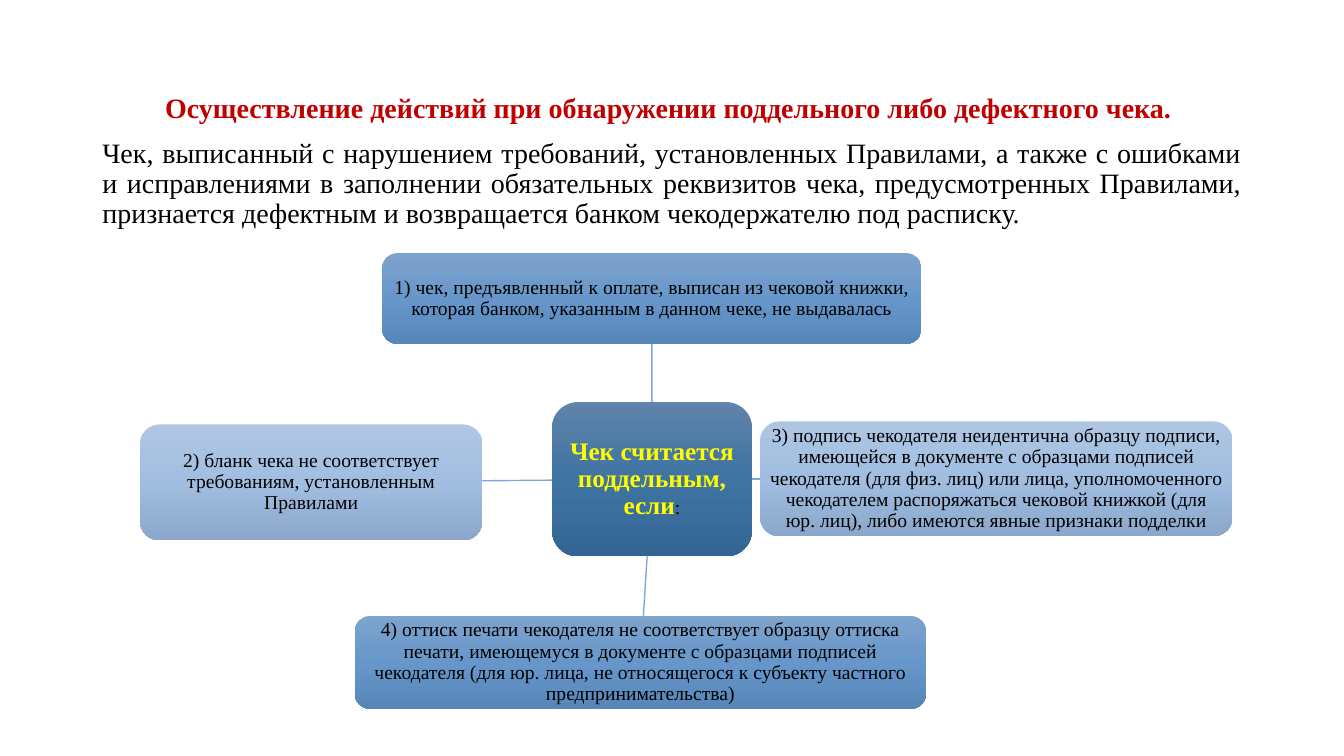
"""Build a slide on forged and defective cheques with a hub diagram."""
from copy import deepcopy

from lxml import etree
from pptx import Presentation
from pptx.dml.color import RGBColor
from pptx.enum.shapes import MSO_CONNECTOR, MSO_SHAPE
from pptx.enum.text import MSO_ANCHOR, PP_ALIGN
from pptx.oxml.ns import qn
from pptx.util import Pt

CENTER, JUSTIFY = PP_ALIGN.CENTER, PP_ALIGN.JUSTIFY
MIDDLE, TOP = MSO_ANCHOR.MIDDLE, MSO_ANCHOR.TOP
ROUNDED, STRAIGHT = MSO_SHAPE.ROUNDED_RECTANGLE, MSO_CONNECTOR.STRAIGHT

FONT = "Times New Roman"
LINE_COLOR = "7AA9DA"
BLUE = ("7EA3CC", "6797CA", "5786B9")
PALE = ("AFC6E3", "A1BEE1", "8BA8CC")
DARK = ("5F83AA", "3F73A2", "346694")

HEADING = {"size": Pt(20), "bold": True, "color": "C00000"}
BODY = {"size": Pt(20), "bold": False, "color": "000000"}
LABEL = {"size": Pt(14), "bold": False, "color": "000000"}
HUB_LABEL = {"size": Pt(18), "bold": True, "color": "FFFF00"}

INTRO_AREA = (66, 64, 828, 423)
INTRO = [
    (CENTER, [("Осуществление действий при обнаружении поддельного либо дефектного чека. ", HEADING)]),
    (JUSTIFY, [("Чек, выписанный с нарушением требований, установленных Правилами, а также с ошибками "
                "и исправлениями в заполнении обязательных реквизитов чека, предусмотренных Правилами, "
                "признается дефектным и возвращается банком чекодержателю под расписку.", BODY)]),
]
HUB_AREA = (394.4, 287.2, 142.6, 110.2)
HUB_TEXT = [("Чек считается поддельным, если", HUB_LABEL), (":", LABEL)]
SIGNS = [
    ((273, 180.8, 385.2, 64.8), BLUE,
     "1) чек, предъявленный к оплате, выписан из чековой книжки, которая банком, "
     "указанным в данном чеке, не выдавалась"),
    ((100, 303.2, 244.6, 82.8), PALE,
     "2) бланк чека не соответствует требованиям, установленным Правилами"),
    ((543, 301, 337.5, 82), PALE,
     "3) подпись чекодателя неидентична образцу подписи, имеющейся в документе с образцами "
     "подписей чекодателя (для физ. лиц) или лица, уполномоченного чекодателем распоряжаться "
     "чековой книжкой (для юр. лиц), либо имеются явные признаки подделки"),
    ((253.4, 440, 408.2, 66.4), BLUE,
     "4) оттиск печати чекодателя не соответствует образцу оттиска печати, имеющемуся в документе "
     "с образцами подписей чекодателя (для юр. лица, не относящегося к субъекту частного "
     "предпринимательства)"),
]


def color(value):
    return RGBColor.from_string(value)


def apply(target, values):
    for name, value in values.items():
        setattr(target, name, value)


def write(box, paragraphs, anchor, inset_x, inset_y, gap=0):
    frame = box.text_frame
    apply(frame, {"word_wrap": True, "vertical_anchor": anchor,
                  "margin_left": Pt(inset_x), "margin_right": Pt(inset_x),
                  "margin_top": Pt(inset_y), "margin_bottom": Pt(inset_y)})
    for index, (alignment, spans) in enumerate(paragraphs):
        para = frame.add_paragraph() if index else frame.paragraphs[0]
        apply(para, {"alignment": alignment, "line_spacing": 0.9,
                     "space_before": Pt(gap if index else 0)})
        for text, style in spans:
            span = para.add_run()
            span.text = text
            apply(span.font, {"name": FONT, "size": style["size"], "bold": style["bold"]})
            span.font.color.rgb = color(style["color"])


def add_card(page, area, shades, spans, inset):
    card = page.shapes.add_shape(ROUNDED, *map(Pt, area))
    card.shadow.inherit = False
    card.line.fill.background()
    card.fill.gradient()
    card.fill.gradient_angle = 270
    stops = card._element.spPr.find(qn("a:gradFill")).find(qn("a:gsLst"))
    stops.insert(1, deepcopy(stops[0]))
    for stop, position, shade in zip(card.fill.gradient_stops, (0, 0.5, 1), shades):
        stop.position = position
        stop.color.rgb = color(shade)
    write(card, [(CENTER, spans)], MIDDLE, inset, inset)


def center(area):
    left, top, width, height = area
    return left + width / 2, top + height / 2


def edge_point(area, target):
    """Return where the line from the centre of area to target leaves area."""
    x, y = center(area)
    dx, dy = target[0] - x, target[1] - y
    share = 1 / max(abs(dx) / (area[2] / 2), abs(dy) / (area[3] / 2))
    return x + dx * share, y + dy * share


def add_spoke(page, area):
    start = edge_point(HUB_AREA, center(area))
    end = edge_point(area, center(HUB_AREA))
    spoke = page.shapes.add_connector(STRAIGHT, *map(Pt, start + end))
    spoke.line.width = Pt(1)
    spoke.line.color.rgb = color(LINE_COLOR)
    etree.SubElement(spoke._element.spPr, qn("a:effectLst"))


def main():
    deck = Presentation()
    apply(deck, {"slide_width": Pt(960), "slide_height": Pt(540)})
    page = deck.slides.add_slide(deck.slide_layouts[6])
    intro = page.shapes.add_textbox(*map(Pt, INTRO_AREA))
    write(intro, INTRO, TOP, 7.2, 3.6, gap=10)
    add_card(page, HUB_AREA, DARK, HUB_TEXT, 3.6)
    for area, shades, text in SIGNS:
        add_spoke(page, area)
        add_card(page, area, shades, [(text, LABEL)], 2.8)
    deck.save("out.pptx")


if __name__ == "__main__":
    main()
